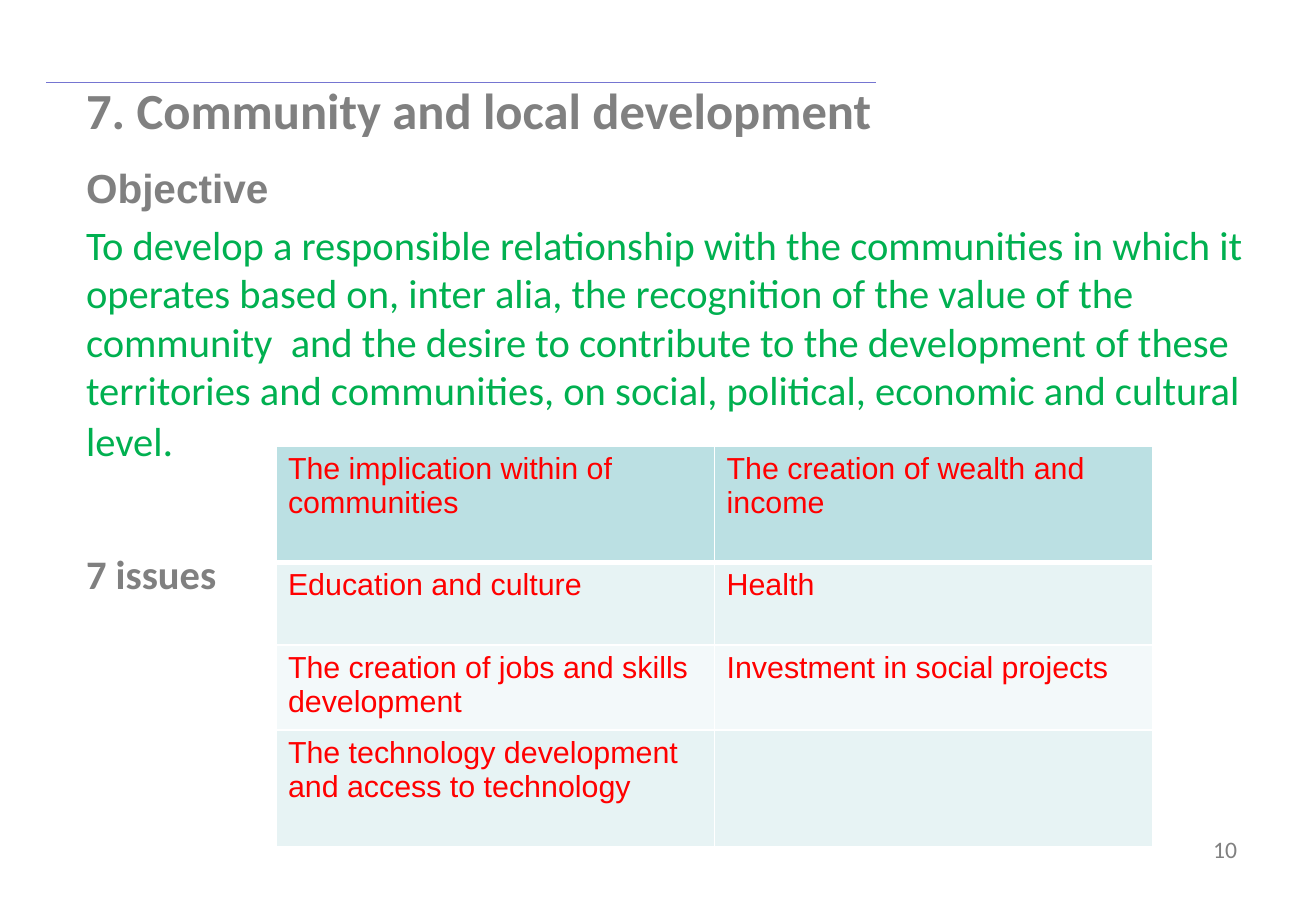
from dataclasses import dataclass

from lxml import etree
from pptx import Presentation
from pptx import util as u
from pptx.dml.color import RGBColor
from pptx.enum import shapes, text
from pptx.oxml import ns


@dataclass(frozen=True)
class Theme:
    heading_font: str = "Calibri"
    table_font: str = "Arial"
    grey: str = "808080"
    green: str = "00B050"
    red: str = "FF0000"
    rule: str = "7575D1"
    border: str = "FFFFFF"
    row_fills: tuple = ("BBE0E3", "E7F3F4", "F3F9FA", "E7F3F4")
    title_size: int = 30
    body_size: int = 24
    stop_size: int = 25
    table_size: int = 18
    number_size: int = 14


THEME = Theme()

OBJECTIVE = (
    "To develop a responsible relationship with the communities in which it "
    "operates based on, inter alia, the recognition of the value of the "
    "community  and the desire to contribute to the development of these "
    "territories and communities, on social, political, economic and cultural level"
)

ISSUES = (
    ("The implication within of communities", "The creation of wealth and income"),
    ("Education and culture", "Health"),
    ("The creation of jobs and skills development", "Investment in social projects"),
    ("The technology development and access to technology", ""),
)
ROW_HEIGHTS = (0.96, 0.68, 0.66, 0.96)


def add_span(para, words, size, color, font=THEME.heading_font, bold=False):
    span = para.add_run()
    span.text = words
    span.font.name = font
    span.font.size = u.Pt(size)
    span.font.bold = bold
    span.font.color.rgb = RGBColor.from_string(color)


def add_box(page, left, top, width, height):
    box = page.shapes.add_textbox(*map(u.Inches, (left, top, width, height)))
    box.text_frame.word_wrap = True
    return box.text_frame


def add_para(frame, space_before, line_spacing=1.0):
    para = frame.add_paragraph()
    para.space_before = u.Pt(space_before)
    para.line_spacing = line_spacing
    return para


def add_rule(page, left, right, top):
    rule = page.shapes.add_connector(
        shapes.MSO_CONNECTOR.STRAIGHT,
        u.Inches(left), u.Inches(top), u.Inches(right), u.Inches(top))
    rule.line.color.rgb = RGBColor.from_string(THEME.rule)
    rule.line.width = u.Pt(0.75)
    etree.SubElement(rule.element.spPr, ns.qn("a:effectLst"))


def add_body(page):
    frame = add_box(page, 0.61, 0.6, 9.75, 6.69)
    add_span(frame.paragraphs[0], "7. Community and local development",
             THEME.title_size, THEME.grey, bold=True)
    add_span(add_para(frame, 5, 1.3), "Objective",
             THEME.body_size, THEME.grey, THEME.table_font, bold=True)
    objective = add_para(frame, 5)
    add_span(objective, OBJECTIVE, THEME.body_size, THEME.green)
    add_span(objective, ".", THEME.stop_size, THEME.green)
    add_span(add_para(frame, 50), "7 issues",
             THEME.body_size, THEME.grey, bold=True)


def set_borders(cell, top, bottom):
    """Draw the four cell edges; top and bottom are widths in points."""
    properties = cell._tc.get_or_add_tcPr()
    edges = {"a:lnL": 1, "a:lnR": 1, "a:lnT": top, "a:lnB": bottom}
    for index, (tag, width) in enumerate(edges.items()):
        edge = etree.Element(ns.qn(tag), w=str(u.Pt(width)))
        fill = etree.SubElement(edge, ns.qn("a:solidFill"))
        etree.SubElement(fill, ns.qn("a:srgbClr"), val=THEME.border)
        properties.insert(index, edge)


def add_issue_table(page):
    table = page.shapes.add_table(
        len(ISSUES), 2, u.Inches(2.27), u.Inches(3.67),
        u.Inches(7.22), u.Inches(sum(ROW_HEIGHTS))).table
    table.first_row = table.horz_banding = False
    for row, (issues, height) in enumerate(zip(ISSUES, ROW_HEIGHTS)):
        table.rows[row].height = u.Inches(height)
        for column, issue in enumerate(issues):
            cell = table.cell(row, column)
            cell.fill.solid()
            cell.fill.fore_color.rgb = RGBColor.from_string(THEME.row_fills[row])
            set_borders(cell, top=3 if row == 1 else 1, bottom=3 if row == 0 else 1)
            if issue:
                add_span(cell.text_frame.paragraphs[0], issue,
                         THEME.table_size, THEME.red, THEME.table_font)


def add_page_number(page):
    para = add_box(page, 9.51, 6.82, 0.77, 0.55).paragraphs[0]
    para.alignment = text.PP_ALIGN.RIGHT
    add_span(para, "10", THEME.number_size, THEME.grey)


def main():
    deck = Presentation()
    deck.slide_width, deck.slide_height = u.Inches(10.83), u.Inches(7.5)
    page = deck.slides.add_slide(deck.slide_layouts[6])
    add_rule(page, 0.38, 7.21, 0.68)
    add_body(page)
    add_page_number(page)
    add_issue_table(page)
    deck.save("out.pptx")


if __name__ == "__main__":
    main()
